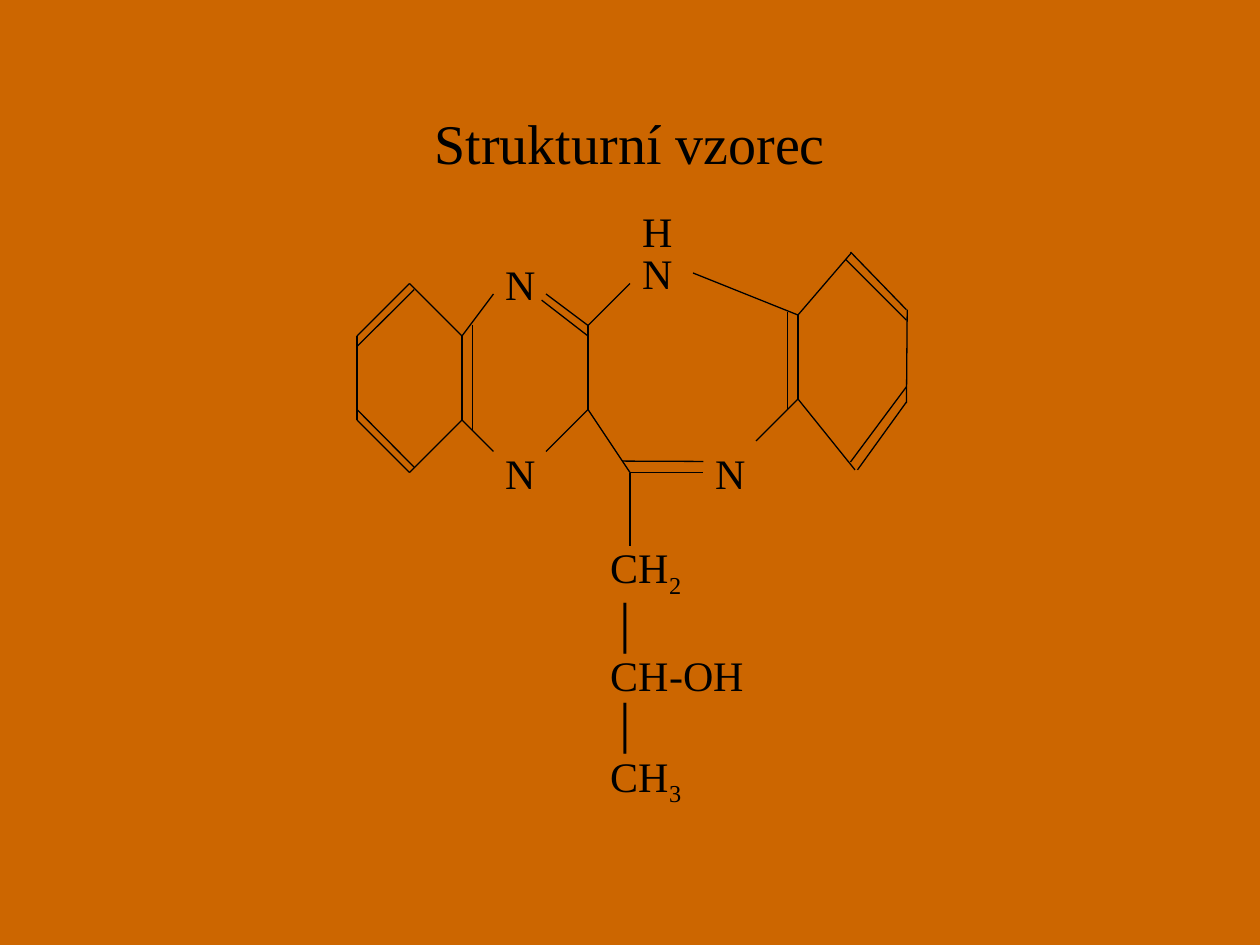
"""Build a slide showing a structural formula drawn from bonds and atom labels."""
from lxml import etree
from pptx import Presentation
from pptx.dml.color import RGBColor
from pptx.enum.shapes import MSO_CONNECTOR
from pptx.enum.text import MSO_ANCHOR, MSO_AUTO_SIZE, PP_ALIGN
from pptx.oxml.ns import qn
from pptx.util import Pt

STRAIGHT = MSO_CONNECTOR.STRAIGHT
MIDDLE = MSO_ANCHOR.MIDDLE
FIT_SHAPE = MSO_AUTO_SIZE.SHAPE_TO_FIT_TEXT
CENTER = PP_ALIGN.CENTER
LEFT = PP_ALIGN.LEFT

ORANGE = RGBColor(0xCC, 0x66, 0x00)
BLACK = RGBColor(0x00, 0x00, 0x00)
FONT = "Times New Roman"

LEFT_BENZENE = [
    (204, 192, 204, 240), (264, 192, 264, 240), (264, 192, 234, 162),
    (234, 162, 204, 192), (204, 240, 234, 270), (234, 270, 264, 240),
]
PYRAZINE = [
    (264, 192, 282, 168), (264, 240, 282, 258), (336, 186, 336, 234),
    (336, 186, 312, 168), (336, 234, 312, 258),
]
DIAZEPINE = [
    (336, 186, 360, 162), (336, 234, 360, 270), (360, 270, 360, 312),
    (456, 180, 456, 228), (432, 252, 456, 228), (396, 156, 456, 180),
    (360, 270, 402, 270),
]
RIGHT_BENZENE = [
    (518.4, 177, 518, 230.4), (488.6, 268.5, 456, 228),
    (490, 268.5, 518, 229.7), (456, 180, 486.5, 144.5),
    (486, 144, 518, 177),
]
DOUBLE_BONDS = [
    (450, 178.5, 450, 234), (270, 186, 270, 246),
    (204, 198, 236.7, 165.5), (204, 234, 236.7, 267),
    (309.5, 171.5, 336, 192), (355.5, 263.5, 402, 263.7),
    (483.3, 148.3, 518, 183), (518, 221, 486, 264),
]
ATOMS = [
    ("N", 402, 252), ("N", 360, 138), ("N", 282, 252),
    ("N", 282, 144), ("H", 360, 114),
]
SIDE_CHAIN = [("CH", "2"), ("│", ""), ("CH-OH", ""), ("│", ""), ("CH", "3")]


def format_paragraph(paragraph, size, alignment):
    """Apply the common font to a paragraph."""
    paragraph.alignment = alignment
    paragraph.font.name = FONT
    paragraph.font.size = Pt(size)
    paragraph.font.color.rgb = BLACK


def set_title(slide, wording):
    """Place and format the title."""
    title = slide.shapes.title
    title.left, title.top, title.width, title.height = Pt(54), Pt(36), Pt(612), Pt(90)
    title.text_frame.text = wording
    title.text_frame.vertical_anchor = MIDDLE
    format_paragraph(title.text_frame.paragraphs[0], 32, CENTER)


def add_bond(slide, x1, y1, x2, y2):
    """Draw one bond as a thin straight line."""
    bond = slide.shapes.add_connector(STRAIGHT, Pt(x1), Pt(y1), Pt(x2), Pt(y2))
    bond.line.color.rgb = BLACK
    bond.line.width = Pt(0.75)
    etree.SubElement(bond._element.spPr, qn("a:effectLst"))


def add_label(slide, groups, left, top, width, height):
    """Write chemical groups, one a line, each with an optional subscript."""
    frame = slide.shapes.add_textbox(Pt(left), Pt(top), Pt(width), Pt(height)).text_frame
    frame.word_wrap = False
    frame.auto_size = FIT_SHAPE
    for index, (symbol, subscript) in enumerate(groups):
        paragraph = frame.add_paragraph() if index else frame.paragraphs[0]
        paragraph.add_run().text = symbol
        if subscript:
            count = paragraph.add_run()
            count.text = subscript
            count.font._element.set("baseline", "-25000")
        format_paragraph(paragraph, 24, LEFT)


def main():
    """Assemble and save the slide."""
    deck = Presentation()
    deck.slide_width, deck.slide_height = Pt(720), Pt(540)
    slide = deck.slides.add_slide(deck.slide_layouts.get_by_name("Title Only"))
    slide.background.fill.solid()
    slide.background.fill.fore_color.rgb = ORANGE
    set_title(slide, "Strukturní vzorec")
    for symbol, left, top in ATOMS:
        add_label(slide, [(symbol, "")], left, top, 31.7, 36)
    for bond in LEFT_BENZENE + PYRAZINE + DIAZEPINE + RIGHT_BENZENE + DOUBLE_BONDS:
        add_bond(slide, *bond)
    add_label(slide, SIDE_CHAIN, 342, 306, 90.7, 151.2)
    deck.save("out.pptx")


if __name__ == "__main__":
    main()
